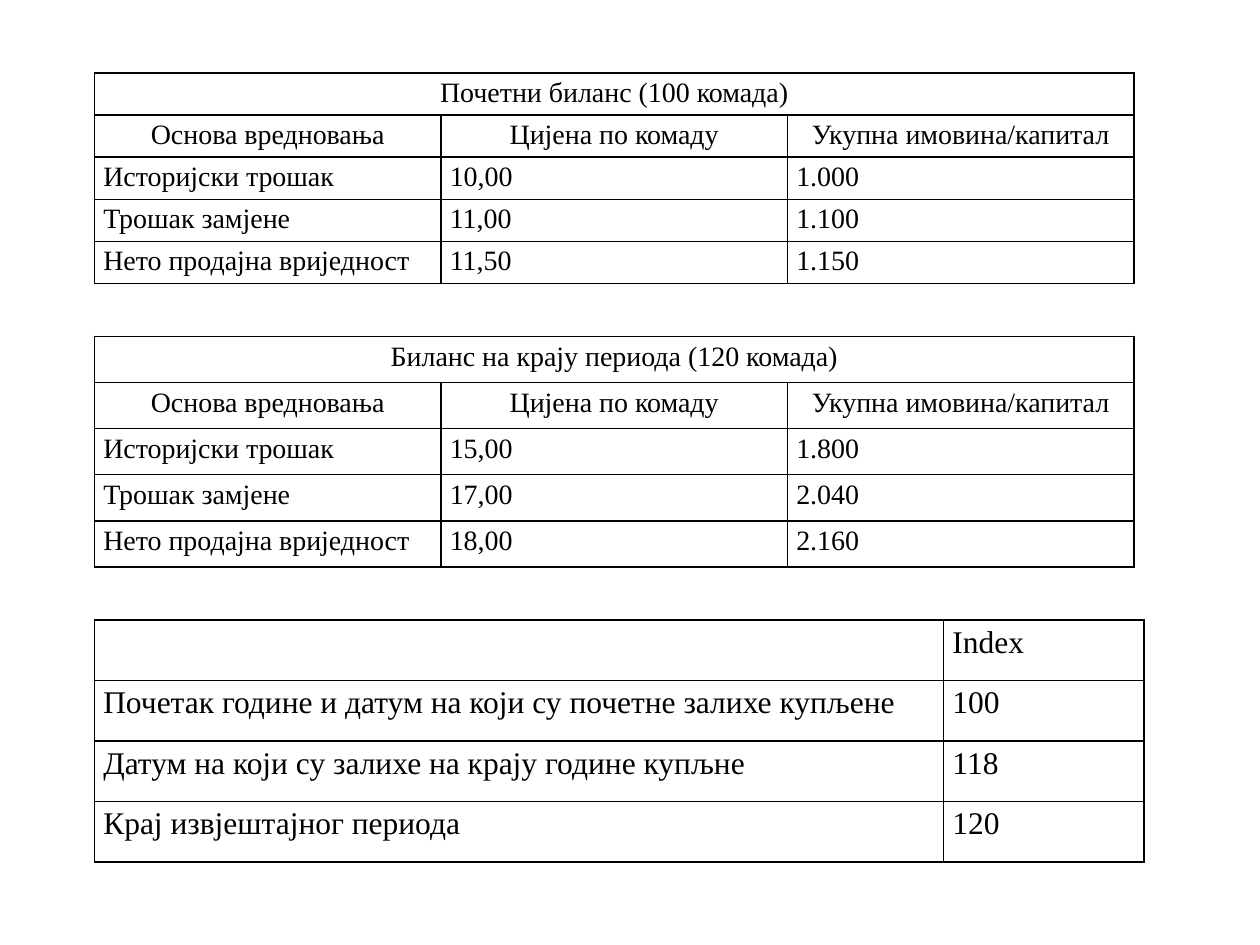
from dataclasses import dataclass

from lxml import etree
from pptx import Presentation
from pptx.dml.color import RGBColor
from pptx.enum.text import PP_ALIGN
from pptx.oxml.ns import qn
from pptx.slide import Slide
from pptx.table import _Cell
from pptx.util import Inches, Pt

CENTER = PP_ALIGN.CENTER
JUSTIFY = PP_ALIGN.JUSTIFY
FONT = "Times New Roman"
BLACK = "000000"
LEFT = 0.75
BALANCE_HEADINGS = ("Основа вредновања", "Цијена по комаду", "Укупна имовина/капитал")


@dataclass
class TableSpec:
    top: float
    height: float
    widths: tuple[float, ...]
    rows: list[tuple[str, ...]]
    size: int
    heading_rows: int = 0


def color(value: str) -> RGBColor:
    return RGBColor.from_string(value)


def add_borders(cell: _Cell) -> None:
    properties = cell._tc.get_or_add_tcPr()
    for position, side in enumerate(("lnL", "lnR", "lnT", "lnB")):
        line = etree.Element(qn(f"a:{side}"), w=str(Pt(1)))
        fill = etree.SubElement(line, qn("a:solidFill"))
        etree.SubElement(fill, qn("a:srgbClr"), val=BLACK)
        properties.insert(position, line)


def write_cell(cell: _Cell, text: str, size: int, alignment: PP_ALIGN) -> None:
    cell.margin_left = cell.margin_right = Inches(0.07)
    cell.margin_top = cell.margin_bottom = 0
    paragraph = cell.text_frame.paragraphs[0]
    paragraph.text = text
    paragraph.alignment = alignment
    paragraph.line_spacing = 1.15
    paragraph.space_after = Pt(6)
    paragraph.font.name = FONT
    paragraph.font.size = Pt(size)
    paragraph.font.color.rgb = color(BLACK)


def add_table(page: Slide, spec: TableSpec) -> None:
    frame = page.shapes.add_table(
        len(spec.rows), len(spec.widths),
        Inches(LEFT), Inches(spec.top), Inches(sum(spec.widths)), Inches(spec.height),
    )
    table = frame.table
    table.first_row = table.horz_banding = False
    for column, width in zip(table.columns, spec.widths):
        column.width = Inches(width)
    for row_index, texts in enumerate(spec.rows):
        alignment = CENTER if row_index < spec.heading_rows else JUSTIFY
        for cell in table.rows[row_index].cells:
            cell.fill.background()
            add_borders(cell)
        for column_index, text in enumerate(texts):
            write_cell(table.cell(row_index, column_index), text, spec.size, alignment)
        if len(texts) == 1:
            table.cell(row_index, 0).merge(table.cell(row_index, len(spec.widths) - 1))


def balance_table(
    top: float, height: float, title: str, rows: list[tuple[str, ...]]
) -> TableSpec:
    return TableSpec(
        top, height, (2.75,) * 3, [(title,), BALANCE_HEADINGS, *rows], 16, heading_rows=2
    )


TABLES = [
    balance_table(0.58, 1.67, "Почетни биланс (100 комада)", [
        ("Историјски трошак", "10,00", "1.000"),
        ("Трошак замјене", "11,00", "1.100"),
        ("Нето продајна вриједност", "11,50", "1.150"),
    ]),
    balance_table(2.67, 1.83, "Биланс на крају периода (120 комада)", [
        ("Историјски трошак", "15,00", "1.800"),
        ("Трошак замјене", "17,00", "2.040"),
        ("Нето продајна вриједност", "18,00", "2.160"),
    ]),
    TableSpec(4.92, 1.92, (6.74, 1.59), [
        ("", "Index"),
        ("Почетак године и датум на који су почетне залихе купљене", "100"),
        ("Датум на који су залихе на крају године купљне", "118"),
        ("Крај извјештајног периода", "120"),
    ], 18),
]


def main() -> None:
    deck = Presentation()
    deck.slide_width = Inches(10)
    deck.slide_height = Inches(7.5)
    page = deck.slides.add_slide(deck.slide_layouts[6])
    for spec in TABLES:
        add_table(page, spec)
    deck.save("out.pptx")


if __name__ == "__main__":
    main()
